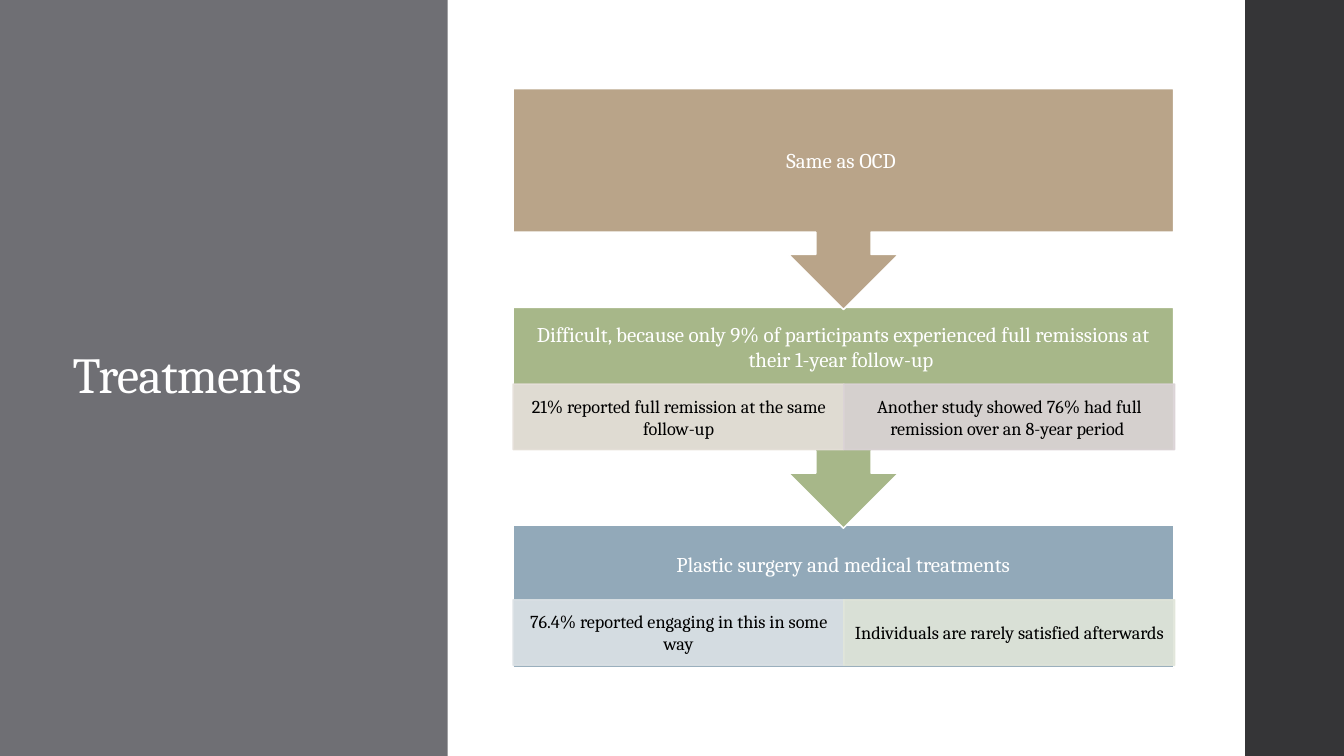
"""Build the Treatments slide: a title sidebar beside a three-step downward process."""
from lxml import etree
from pptx import Presentation
from pptx.dml.color import RGBColor
from pptx.enum import shapes, text
from pptx.oxml import ns
from pptx.util import Inches, Pt

COLORS = {
    "white": "FFFFFF", "black": "000000", "sidebar": "6F6F74", "edge": "353537",
    "tan": "B9A489", "green": "A7B789", "blue": "92A9B9",
    "pale tan": "E6E0DA", "pale mauve": "DBD3D6",
    "pale blue": "DCE2E6", "pale green": "E1E6DA",
}
FONT = "Cambria"
LEFT, WIDTH = 5.09, 6.55
CELL_WIDTH, CELL_HEIGHT = 3.28, 0.65
RECTANGLE = shapes.MSO_SHAPE.RECTANGLE
CALLOUT = shapes.MSO_SHAPE.UP_ARROW_CALLOUT

STEPS = [
    {"kind": CALLOUT, "top": 0.88, "height": 2.19, "color": "tan",
     "heading": "Same as OCD ", "heading_height": 1.42, "cells": []},
    {"kind": CALLOUT, "top": 3.05, "height": 2.19, "color": "green",
     "heading": "Difficult, because only 9% of participants experienced "
                "full remissions at their 1-year follow-up ",
     "heading_height": 0.77, "cells_top": 3.81,
     "cells": [("21% reported full remission at the same follow-up", "pale tan"),
               ("Another study showed 76% had full remission over an 8-year period ",
                "pale mauve")]},
    {"kind": RECTANGLE, "top": 5.21, "height": 1.42, "color": "blue",
     "heading": "Plastic surgery and medical treatments",
     "heading_height": 0.77, "cells_top": 5.95,
     "cells": [("76.4% reported engaging in this in some way", "pale blue"),
               ("Individuals are rarely satisfied afterwards", "pale green")]},
]

presentation = Presentation()
presentation.slide_width, presentation.slide_height = Inches(13.33), Inches(7.5)
slide = presentation.slides.add_slide(presentation.slide_layouts[5])


def add_block(kind, box, color, line=None, alpha=None):
    """Add a filled shape, optionally outlined and translucent."""
    shape = slide.shapes.add_shape(kind, *map(Inches, box))
    shape.shadow.inherit = False
    shape.fill.solid()
    shape.fill.fore_color.rgb = RGBColor.from_string(COLORS[color])
    if line:
        shape.line.color.rgb = RGBColor.from_string(COLORS[line])
        shape.line.width = Pt(1.1)
    else:
        shape.line.fill.background()
    if alpha:
        for color_element in shape.element.spPr.iter(ns.qn("a:srgbClr")):
            etree.SubElement(color_element, ns.qn("a:alpha"), val=str(alpha * 1000))
    return shape


def write(shape, words, size, color, align, insets):
    """Write one vertically centred paragraph and return its run."""
    frame = shape.text_frame
    frame.word_wrap = True
    frame.auto_size = text.MSO_AUTO_SIZE.NONE
    frame.vertical_anchor = text.MSO_ANCHOR.MIDDLE
    frame.margin_left = frame.margin_right = Inches(insets[0])
    frame.margin_top = frame.margin_bottom = Inches(insets[1])
    paragraph = frame.paragraphs[0]
    paragraph.alignment = align
    run = paragraph.add_run()
    run.text = words
    run.font.name = FONT
    run.font.size = Pt(size)
    run.font.color.rgb = RGBColor.from_string(COLORS[color])
    return run


title = slide.shapes.title
title.left, title.top = Inches(0.62), Inches(0.91)
title.width, title.height = Inches(2.97), Inches(5.67)
title_run = write(title, "Treatments", 36, "white", text.PP_ALIGN.LEFT, (0.1, 0.05))
title_run.font._element.set("spc", "-50")
title.text_frame.paragraphs[0].line_spacing = 0.9

sidebar = add_block(RECTANGLE, (0, 0, 4.44, 7.5), "sidebar")
title.element.addprevious(sidebar.element)
add_block(RECTANGLE, (12.35, 0, 0.98, 7.5), "edge")

for step in reversed(STEPS):
    panel = add_block(step["kind"], (LEFT, step["top"], WIDTH, step["height"]),
                      step["color"], "white")
    if step["kind"] == CALLOUT:
        panel.rotation = 180
    heading = slide.shapes.add_textbox(
        *map(Inches, (LEFT, step["top"], WIDTH, step["heading_height"])))
    write(heading, step["heading"], 15, "white", text.PP_ALIGN.CENTER, (0.12, 0.12))
    for column, (words, color) in enumerate(step["cells"]):
        box = (LEFT + column * CELL_WIDTH, step["cells_top"], CELL_WIDTH, CELL_HEIGHT)
        cell = add_block(RECTANGLE, box, color, color, 90)
        write(cell, words, 13, "black", text.PP_ALIGN.CENTER, (0.1, 0.02))

presentation.save("out.pptx")
